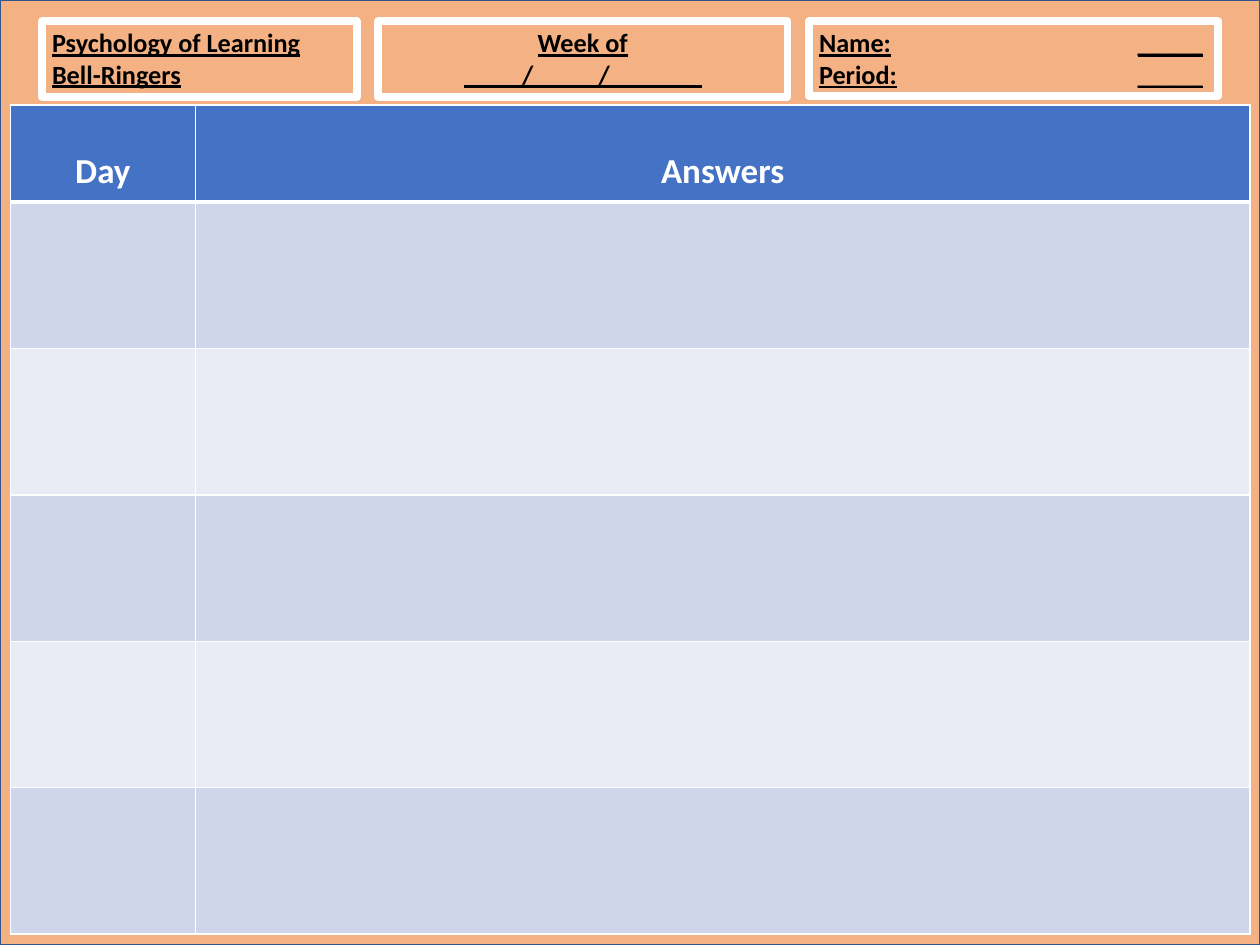
from dataclasses import dataclass

from lxml import etree
from pptx import Presentation
from pptx.dml.color import RGBColor
from pptx.enum import shapes, text
from pptx.oxml import ns
from pptx.util import Pt

LEFT = text.PP_ALIGN.LEFT
CENTER = text.PP_ALIGN.CENTER


@dataclass(frozen=True)
class Theme:
    font: str = "Calibri"
    background: str = "F4B183"
    frame: str = "325491"
    white: str = "FFFFFF"
    ink: str = "000000"
    header: str = "4472C4"
    bands: tuple[str, str] = ("CFD5EA", "E9EBF5")
    box_size: float = 15
    header_size: float = 20


@dataclass(frozen=True)
class Box:
    left: float
    width: float
    height: float
    lines: tuple[str, ...]
    align: text.PP_ALIGN = LEFT


THEME = Theme()
BOX_TOP = 12.24
TAB_STOP = 182
BOXES = (
    Box(24, 180, 43.2, ("Psychology of Learning", "Bell-Ringers")),
    Box(462.24, 234, 42.5, ("Name:\t_____", "Period:\t_____")),
    Box(216, 234, 43.2, ("Week of", " ____/_____/_______"), CENTER),
)

TABLE_LEFT, TABLE_TOP = 5.9, 60
COLUMN_WIDTHS = (105.8, 602.6)
HEADER_HEIGHT, DAY_HEIGHT, DAYS = 55.4, 83.7, 5
HEADINGS = ("Day", "Answers")


def color(value: str) -> RGBColor:
    return RGBColor.from_string(value)


def write(frame, lines: tuple[str, ...], *, size: float, ink: str,
          align: text.PP_ALIGN = LEFT, underline: bool = False) -> None:
    for index, line in enumerate(lines):
        paragraph = frame.paragraphs[0] if index == 0 else frame.add_paragraph()
        paragraph.alignment = align
        run = paragraph.add_run()
        run.text = line
        run.font.name = THEME.font
        run.font.size = Pt(size)
        run.font.bold = True
        run.font.underline = underline
        run.font.color.rgb = color(ink)
        if "\t" in line:
            properties = paragraph._p.get_or_add_pPr()
            stops = etree.SubElement(properties, ns.qn("a:tabLst"))
            etree.SubElement(stops, ns.qn("a:tab"), pos=str(Pt(TAB_STOP)), algn="l")


def add_outline(slide, left: float, top: float, width: float, height: float,
                line_color: str, line_width: float):
    """Add an unfilled rectangle with rounded line joins."""
    shape = slide.shapes.add_shape(
        shapes.MSO_SHAPE.RECTANGLE, Pt(left), Pt(top), Pt(width), Pt(height))
    shape.shadow.inherit = False
    shape.fill.background()
    shape.line.color.rgb = color(line_color)
    shape.line.width = Pt(line_width)
    etree.SubElement(shape.line._get_or_add_ln(), ns.qn("a:round"))
    return shape


def add_box(slide, box: Box) -> None:
    shape = add_outline(slide, box.left, BOX_TOP, box.width, box.height, THEME.white, 4.5)
    frame = shape.text_frame
    frame.word_wrap = True
    frame.vertical_anchor = text.MSO_ANCHOR.TOP
    frame.margin_left = frame.margin_right = Pt(5.76)
    frame.margin_top = frame.margin_bottom = Pt(2.88)
    write(frame, box.lines, size=THEME.box_size, ink=THEME.ink,
          align=box.align, underline=True)


def style_cell(cell, fill: str, bottom_width: float) -> None:
    """Set white borders first, since the fill must follow them in the XML."""
    properties = cell._tc.get_or_add_tcPr()
    widths = {"lnL": 1, "lnR": 1, "lnT": 1, "lnB": bottom_width}
    for side, width in widths.items():
        line = etree.SubElement(properties, ns.qn(f"a:{side}"), w=str(Pt(width)))
        solid = etree.SubElement(line, ns.qn("a:solidFill"))
        etree.SubElement(solid, ns.qn("a:srgbClr"), val=THEME.white)
    cell.fill.solid()
    cell.fill.fore_color.rgb = color(fill)


def add_answer_table(slide) -> None:
    heights = (HEADER_HEIGHT,) + (DAY_HEIGHT,) * DAYS
    table = slide.shapes.add_table(
        len(heights), len(COLUMN_WIDTHS), Pt(TABLE_LEFT), Pt(TABLE_TOP),
        Pt(sum(COLUMN_WIDTHS)), Pt(sum(heights))).table
    for column, width in zip(table.columns, COLUMN_WIDTHS):
        column.width = Pt(width)
    for index, (row, height) in enumerate(zip(table.rows, heights)):
        row.height = Pt(height)
        fill = THEME.bands[(index - 1) % 2] if index else THEME.header
        for cell in row.cells:
            style_cell(cell, fill, 1 if index else 3)
    for cell, heading in zip(table.rows[0].cells, HEADINGS):
        cell.vertical_anchor = text.MSO_ANCHOR.BOTTOM
        cell.margin_bottom = Pt(5)
        write(cell.text_frame, (heading,), size=THEME.header_size,
              ink=THEME.white, align=CENTER)


def main() -> None:
    presentation = Presentation()
    presentation.slide_width, presentation.slide_height = Pt(720), Pt(540)
    slide = presentation.slides.add_slide(presentation.slide_layouts[6])
    slide.background.fill.solid()
    slide.background.fill.fore_color.rgb = color(THEME.background)
    add_outline(slide, 0, 0, 720, 540, THEME.frame, 1)
    add_answer_table(slide)
    for box in BOXES:
        add_box(slide, box)
    presentation.save("out.pptx")


if __name__ == "__main__":
    main()
